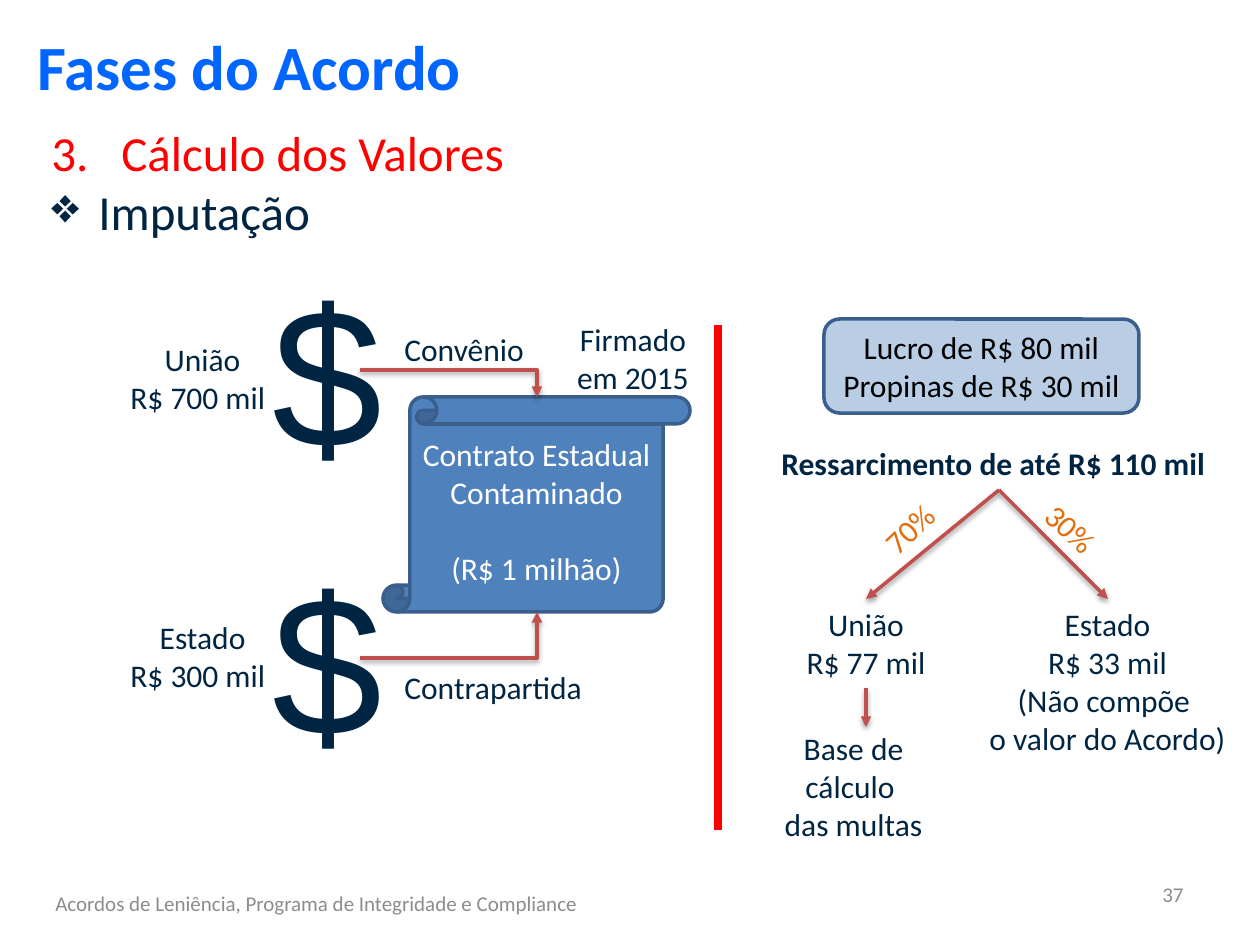
"""Build the slide on how amounts are imputed in a leniency agreement."""
from lxml import etree
from pptx import Presentation
from pptx.dml.color import RGBColor
from pptx.enum.shapes import MSO_CONNECTOR, MSO_SHAPE
from pptx.enum.text import MSO_ANCHOR, PP_ALIGN
from pptx.oxml import parse_xml
from pptx.oxml.ns import nsdecls, qn
from pptx.util import Pt

LEFT, CENTER, RIGHT, JUSTIFY = PP_ALIGN.LEFT, PP_ALIGN.CENTER, PP_ALIGN.RIGHT, PP_ALIGN.JUSTIFY
TOP, MIDDLE = MSO_ANCHOR.TOP, MSO_ANCHOR.MIDDLE
STRAIGHT, ELBOW = MSO_CONNECTOR.STRAIGHT, MSO_CONNECTOR.ELBOW
ROUNDED, SCROLL = MSO_SHAPE.ROUNDED_RECTANGLE, MSO_SHAPE.VERTICAL_SCROLL
PX = 914400 / 126
COLORS = {
    "navy": "002543", "title": "0066FF", "red": "FF0000", "arrow": "C0504D",
    "orange": "E46C0A", "gray": "8C8C8C", "pale": "B9CDE5", "blue": "4F81BD",
    "outline": "3A5F8C", "black": "000000", "white": "FFFFFF",
}
COLORS = {name: RGBColor.from_string(value) for name, value in COLORS.items()}
SHADOW = (
    f'<a:effectLst {nsdecls("a")}><a:outerShdw blurRad="40000" dist="20000" dir="5400000" '
    'rotWithShape="0"><a:srgbClr val="000000"><a:alpha val="38000"/></a:srgbClr>'
    '</a:outerShdw></a:effectLst>'
)


def write(holder, text, color="navy", size=18, align=LEFT, anchor=TOP, wrap=True,
          bold=False, font="Calibri"):
    frame = holder.text_frame
    frame.text = text
    frame.word_wrap = wrap
    frame.vertical_anchor = anchor
    for paragraph in frame.paragraphs:
        paragraph.alignment = align
        for run in paragraph.runs:
            run.font.name = font
            run.font.size = Pt(size)
            run.font.bold = bold
            run.font.color.rgb = COLORS[color]
    return frame


def connect(kind, ends, color="arrow", width=2, arrow=True):
    link = slide.shapes.add_connector(kind, *[round(n * PX) for n in ends])
    link.line.color.rgb = COLORS[color]
    link.line.width = Pt(width)
    properties = link._element.spPr
    if kind == ELBOW:
        properties.find(qn("a:prstGeom")).set("prst", "bentConnector2")
    if arrow:
        etree.SubElement(link.line._get_or_add_ln(), qn("a:tailEnd"), type="triangle")
        properties.append(parse_xml(SHADOW))
    else:
        etree.SubElement(properties, qn("a:effectLst"))


deck = Presentation()
deck.slide_width, deck.slide_height = round(1260 * PX), round(945 * PX)
slide = deck.slides.add_slide(deck.slide_layouts[6])

panels = [
    (ROUNDED, (824, 319, 315, 94), "pale", "black", "Lucro de R$ 80 mil\nPropinas de R$ 30 mil"),
    (SCROLL, (383, 397, 307, 215), "blue", "white",
     "Contrato Estadual Contaminado\n(R$ 1 milhão)"),
]
for geometry, box, fill, color, text in panels:
    panel = slide.shapes.add_shape(geometry, *[round(n * PX) for n in box])
    panel.shadow.inherit = False
    panel.fill.solid()
    panel.fill.fore_color.rgb = COLORS[fill]
    panel.line.color.rgb = COLORS["outline"]
    panel.line.width = Pt(2)
    panel_text = write(panel, text, color, align=CENTER, anchor=MIDDLE)
    if geometry == SCROLL:
        panel_text.paragraphs[-1].space_before = Pt(22)

for ends in [(360, 370, 537, 397), (360, 658, 537, 612)]:
    connect(ELBOW, ends)
for ends in [(999, 490, 866, 599), (999, 490, 1108, 599), (866, 688, 866, 727)]:
    connect(STRAIGHT, ends)
connect(STRAIGHT, (718, 325, 718, 830), "red", 4.5, arrow=False)

centered = {"align": CENTER}
single = {"wrap": False}
centered_single = {"align": CENTER, "wrap": False}
dollar = {"size": 113, "font": "Arial"}
percent = {"color": "orange", "wrap": False}
footer = {"color": "gray", "size": 12, "anchor": MIDDLE}
labels = [
    ("Fases do Acordo", (25, 21, 582, 69), 0, {"color": "title", "size": 36, "bold": True}),
    ("$", (260, 244, 102, 252), 0, dollar),
    ("$", (260, 532, 102, 252), 0, dollar),
    ("Convênio", (392, 324, 146, 50), 0, single),
    ("Contrapartida", (392, 662, 205, 50), 0, single),
    ("Firmado em 2015", (556, 314, 154, 89), 0, centered),
    ("Ressarcimento de até R$ 110 mil", (769, 438, 461, 50), 0, {"bold": True}),
    ("70%", (869, 503, 81, 50), 316.7, percent),
    ("30%", (1031, 504, 81, 50), 43, percent),
    ("União\nR$ 77 mil", (793, 599, 146, 89), 0, centered_single),
    ("Estado\nR$ 33 mil\n(Não compõe \no valor do Acordo)", (975, 599, 265, 165), 0,
     centered_single),
    ("Base de cálculo \ndas multas", (769, 723, 169, 127), 0, centered),
    ("37", (958, 869, 238, 50), 0, {**footer, "align": RIGHT}),
    ("Acordos de Leniência, Programa de Integridade e Compliance", (33, 878, 567, 50), 0,
     {**footer, "align": CENTER}),
]
for text, box, rotation, style in labels:
    label = slide.shapes.add_textbox(*[round(n * PX) for n in box])
    label.rotation = rotation
    write(label, text, **style)

for payer, amount, top in [("União", "R$ 700 mil", 334), ("Estado", "R$ 300 mil", 612)]:
    share = slide.shapes.add_textbox(*[round(n * PX) for n in (118, top, 169, 89)])
    share_text = write(share, f"{payer}\n{amount}", wrap=False)
    share_text.paragraphs[0].alignment = CENTER

headings = [
    ("Cálculo dos Valores", (39, 116, 1192, 57), "red", LEFT, 70,
     "buAutoNum", {"type": "arabicPeriod", "startAt": "3"}),
    ("Imputação", (39, 175, 990, 57), "navy", JUSTIFY, 47, "buChar", {"char": "❖"}),
]
for text, box, color, align, indent, bullet, settings in headings:
    heading = slide.shapes.add_textbox(*[round(n * PX) for n in box])
    heading_text = write(heading, text, color, 28, align)
    layout = heading_text.paragraphs[0]._p.get_or_add_pPr()
    layout.set("marL", str(round(indent * PX)))
    layout.set("indent", str(-round(indent * PX)))
    etree.SubElement(layout, qn(f"a:{bullet}"), settings)

deck.save("out.pptx")
